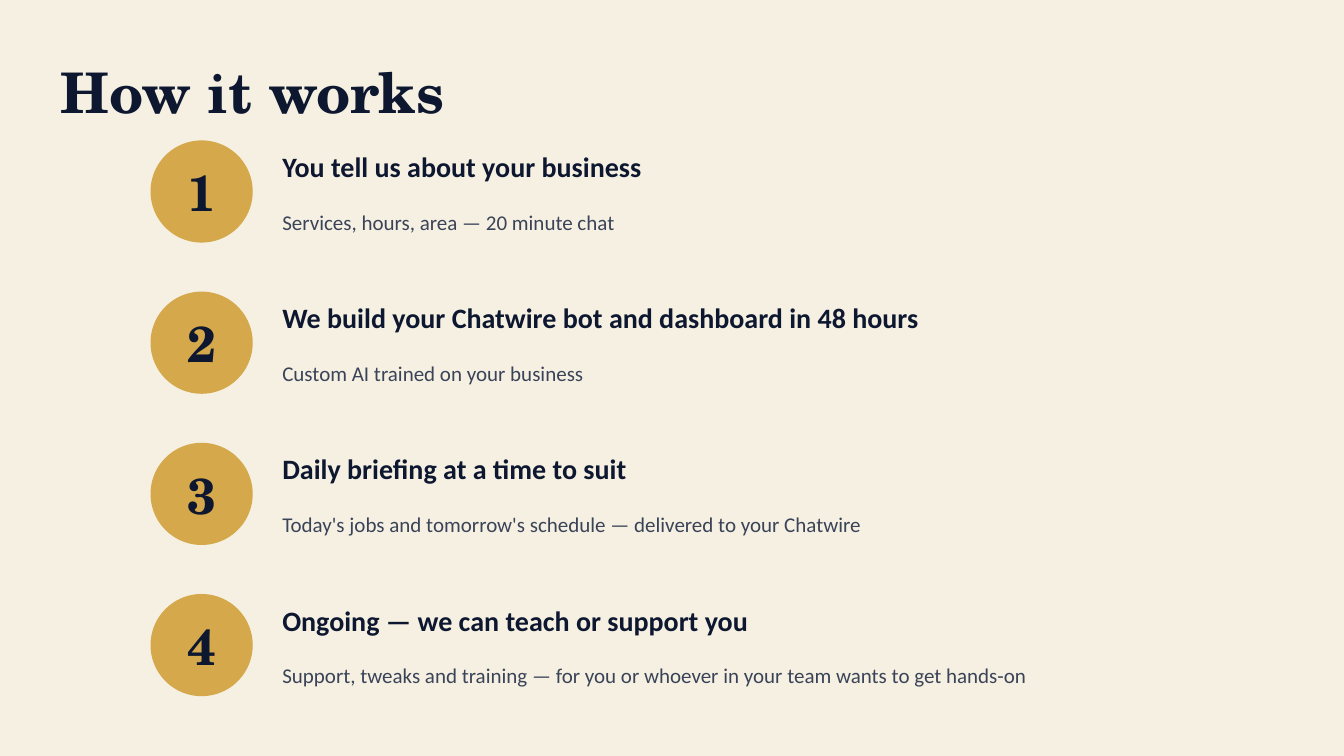
from dataclasses import dataclass

from pptx import Presentation
from pptx.dml.color import RGBColor
from pptx.enum.shapes import MSO_SHAPE as Shape
from pptx.enum.text import MSO_ANCHOR as Anchor, MSO_AUTO_SIZE as AutoSize, PP_ALIGN as Align
from pptx.slide import Slide
from pptx.text.text import TextFrame
from pptx.util import Inches, Pt

CREAM = RGBColor(0xF5, 0xF0, 0xE1)
NAVY = RGBColor(0x0D, 0x17, 0x30)
GOLD = RGBColor(0xD4, 0xA8, 0x4B)
SLATE = RGBColor(0x3A, 0x43, 0x58)

SERIF = "TeX Gyre Schola"
SANS = "Calibri"

FIRST_TOP = 1.4
STEP_PITCH = 1.5
BADGE_LEFT = 1.5
BADGE_SIZE = 1
TEXT_LEFT = 2.8
TEXT_WIDTH = 9.5
TEXT_HEIGHT = 0.5
DETAIL_OFFSET = 0.55


@dataclass
class TextStyle:
    font: str
    size: float
    color: RGBColor
    bold: bool = False
    align: Align = Align.LEFT


@dataclass
class Step:
    heading: str
    detail: str


TITLE = TextStyle(SERIF, 40, NAVY, bold=True)
NUMBER = TextStyle(SERIF, 36, NAVY, bold=True, align=Align.CENTER)
HEADING = TextStyle(SANS, 20, NAVY, bold=True)
DETAIL = TextStyle(SANS, 15, SLATE)

STEPS = [
    Step("You tell us about your business",
         "Services, hours, area — 20 minute chat"),
    Step("We build your Chatwire bot and dashboard in 48 hours",
         "Custom AI trained on your business"),
    Step("Daily briefing at a time to suit",
         "Today's jobs and tomorrow's schedule — delivered to your Chatwire"),
    Step("Ongoing — we can teach or support you",
         "Support, tweaks and training — for you or whoever in your team wants to get hands-on"),
]


def write(tf: TextFrame, text: str, style: TextStyle) -> None:
    tf.word_wrap = True
    tf.auto_size = AutoSize.NONE
    tf.vertical_anchor = Anchor.MIDDLE
    tf.margin_left = tf.margin_top = tf.margin_right = tf.margin_bottom = 0
    p = tf.paragraphs[0]
    p.alignment = style.align
    r = p.add_run()
    r.text = text
    r.font.name = style.font
    r.font.size = Pt(style.size)
    r.font.bold = style.bold
    r.font.color.rgb = style.color


def add_title(s: Slide, text: str) -> None:
    sp = s.shapes.title
    sp.left, sp.top, sp.width, sp.height = Inches(0.6), Inches(0.5), Inches(12), Inches(0.8)
    write(sp.text_frame, text, TITLE)


def add_badge(s: Slide, number: int, top: float) -> None:
    sp = s.shapes.add_shape(Shape.OVAL, Inches(BADGE_LEFT), Inches(top),
                            Inches(BADGE_SIZE), Inches(BADGE_SIZE))
    sp.shadow.inherit = False
    sp.fill.solid()
    sp.fill.fore_color.rgb = GOLD
    sp.line.color.rgb = GOLD
    sp.line.width = Pt(1)
    write(sp.text_frame, str(number), NUMBER)


def add_line_of_text(s: Slide, text: str, top: float, style: TextStyle) -> None:
    sp = s.shapes.add_textbox(Inches(TEXT_LEFT), Inches(top),
                              Inches(TEXT_WIDTH), Inches(TEXT_HEIGHT))
    write(sp.text_frame, text, style)


def add_step(s: Slide, number: int, step: Step) -> None:
    top = FIRST_TOP + (number - 1) * STEP_PITCH
    add_badge(s, number, top)
    add_line_of_text(s, step.heading, top, HEADING)
    add_line_of_text(s, step.detail, top + DETAIL_OFFSET, DETAIL)


def main() -> None:
    prs = Presentation()
    prs.slide_width, prs.slide_height = Inches(13.33), Inches(7.5)

    # Slide with a cream background
    s = prs.slides.add_slide(prs.slide_layouts.get_by_name("Title Only"))
    s.background.fill.solid()
    s.background.fill.fore_color.rgb = CREAM

    # Title and numbered steps
    add_title(s, "How it works")
    for number, step in enumerate(STEPS, start=1):
        add_step(s, number, step)

    prs.save("out.pptx")


if __name__ == "__main__":
    main()
